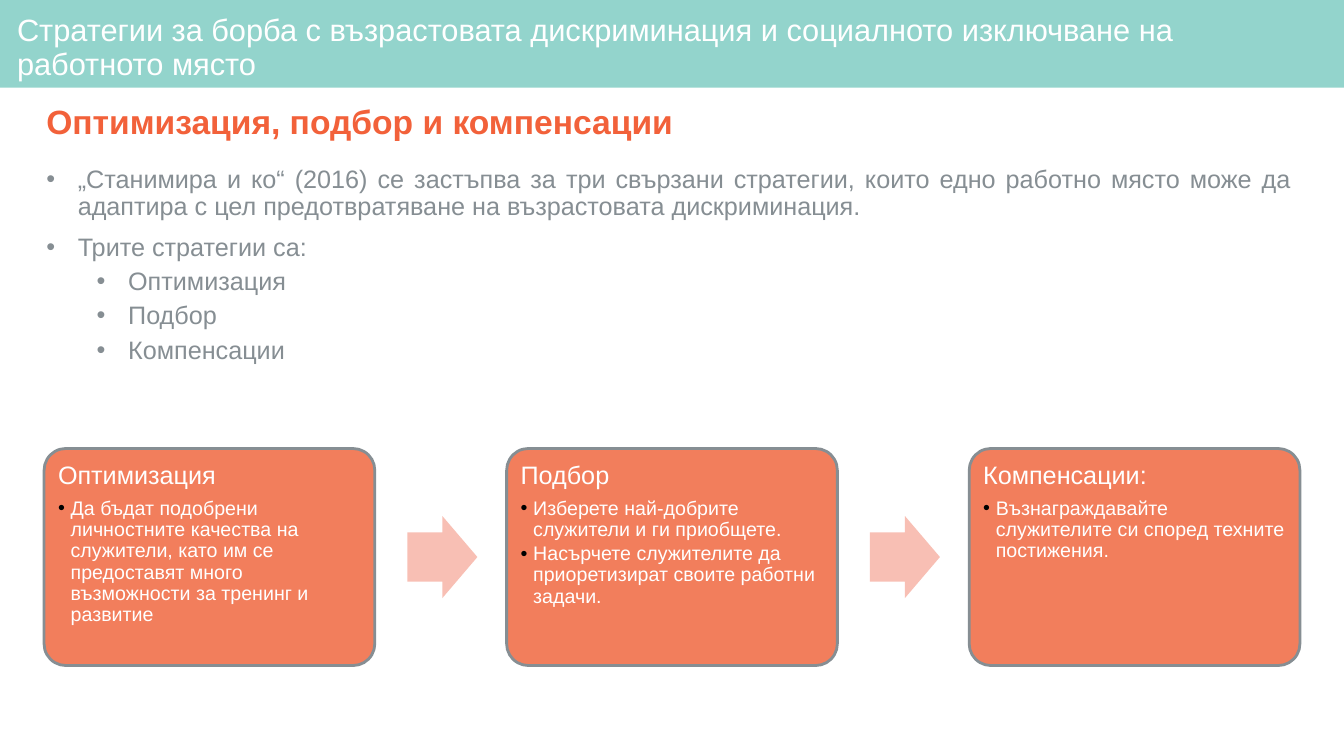
from dataclasses import dataclass

from lxml.etree import SubElement
from pptx import Presentation
from pptx.dml.color import RGBColor
from pptx.enum.shapes import MSO_SHAPE as SHAPE
from pptx.enum.text import MSO_ANCHOR as ANCHOR, PP_ALIGN as ALIGN
from pptx.oxml.ns import qn
from pptx.util import Pt


@dataclass(frozen=True)
class Theme:
    font: str = "Arial"
    teal: str = "93D4CC"
    orange: str = "F2613A"
    card: str = "F27E5C"
    arrow: str = "F8BFB4"
    grey: str = "868E93"
    white: str = "FFFFFF"
    black: str = "000000"
    title_size: float = 22
    heading_size: float = 24
    body_size: float = 18
    card_size: float = 14


theme = Theme()
rgb = RGBColor.from_string


def set_text(sp, paragraphs, inset, anchor=ANCHOR.TOP):
    """Fill a shape with (text, size, color, options) paragraphs."""
    tf = sp.text_frame
    tf.word_wrap = True
    tf.vertical_anchor = anchor
    tf.margin_left, tf.margin_top, tf.margin_right, tf.margin_bottom = (Pt(m) for m in inset)
    for i, (text, size, color, options) in enumerate(paragraphs):
        p = tf.add_paragraph() if i else tf.paragraphs[0]
        p.text = text
        p.alignment = options.get("align", ALIGN.LEFT)
        p.level = options.get("level", 0)
        p.line_spacing = 0.9
        p.space_before = Pt(options.get("before", 0))
        left, first = options.get("indent", (0, 0))
        pPr = p._p.get_or_add_pPr()
        pPr.set("marL", str(Pt(left)))
        pPr.set("indent", str(Pt(first)))
        if "bullet" in options:
            SubElement(SubElement(pPr, qn("a:buClr")), qn("a:srgbClr"), val=options["bullet"])
            SubElement(pPr, qn("a:buFont"), typeface=theme.font)
            SubElement(pPr, qn("a:buChar"), char="•")
        else:
            SubElement(pPr, qn("a:buNone"))
        font = p.runs[0].font
        font.name, font.size, font.color.rgb = theme.font, Pt(size), rgb(color)
        font.bold = options.get("bold", False)


def add_block(kind, left, top, width, height, fill):
    sp = slide.shapes.add_shape(kind, Pt(left), Pt(top), Pt(width), Pt(height))
    sp.shadow.inherit = False
    sp.fill.solid()
    sp.fill.fore_color.rgb = rgb(fill)
    sp.line.fill.background()
    return sp


prs = Presentation()
prs.slide_width, prs.slide_height = Pt(960), Pt(540)
slide = prs.slides.add_slide(prs.slide_layouts[6])

# Title band, heading and strategy list
add_block(SHAPE.RECTANGLE, 0, 0, 960, 62.7, theme.teal)

heading_style = dict(align=ALIGN.JUSTIFY, indent=(36, -18), before=10, bold=True)
item_style = dict(align=ALIGN.JUSTIFY, indent=(40.5, -22.5), before=10, bullet=theme.grey)
subitem_style = dict(level=1, indent=(76.5, -22.5), before=5, bullet=theme.grey)

title = [("Стратегии за борба с възрастовата дискриминация и социалното изключване на работното място",
          theme.title_size, theme.white, {})]
heading = [("Оптимизация, подбор и компенсации", theme.heading_size, theme.orange, heading_style)]
strategies = [(text, theme.body_size, theme.grey, style) for text, style in [
    ("„Станимира и ко“ (2016) се застъпва за три свързани стратегии, които едно работно място "
     "може да адаптира с цел предотвратяване на възрастовата дискриминация.", item_style),
    ("Трите стратегии са:", item_style),
    ("Оптимизация", subitem_style),
    ("Подбор", subitem_style),
    ("Компенсации", subitem_style),
]]

body_inset = (7.2, 3.6, 7.2, 3.6)
for top, width, height, paragraphs, inset, anchor in [
    (6.5, 940, 56.2, title, (4.2,) * 4, ANCHOR.MIDDLE),
    (67, 940, 43.2, heading, body_inset, ANCHOR.MIDDLE),
    (115.2, 921.6, 190, strategies, body_inset, ANCHOR.TOP),
]:
    sp = slide.shapes.add_textbox(Pt(8), Pt(top), Pt(width), Pt(height))
    set_text(sp, paragraphs, inset, anchor)

# Process: three cards joined by arrows
cards = [
    ("Оптимизация", ["Да бъдат подобрени личностните качества на служители, като им се "
                     "предоставят много възможности за тренинг и развитие"]),
    ("Подбор", ["Изберете най-добрите служители и ги приобщете.",
                "Насърчете служителите да приоретизират своите работни задачи."]),
    ("Компенсации:", ["Възнаграждавайте служителите си според техните постижения."]),
]
card_left, card_top, card_width, card_height, card_pitch = 31.5, 320.4, 236.2, 155, 330.4
arrow_width, arrow_height = 50, 58.6
arrow_offset = 259.5
arrow_top = card_top + (card_height - arrow_height) / 2

for i, (name, points) in enumerate(cards):
    left = card_left + i * card_pitch
    card = add_block(SHAPE.ROUNDED_RECTANGLE, left, card_top, card_width, card_height, theme.card)
    card.adjustments[0] = 0.1
    card.line.color.rgb = rgb(theme.grey)
    card.line.width = Pt(2)
    paragraphs = [(name, theme.body_size, theme.white, {})]
    for j, text in enumerate(points):
        point_style = dict(level=1, indent=(9, -9), before=2.1 if j else 6.3, bullet=theme.black)
        paragraphs.append((text, theme.card_size, theme.white, point_style))
    set_text(card, paragraphs, (5.4,) * 4)

    if i < len(cards) - 1:
        arrow = add_block(SHAPE.RIGHT_ARROW, left + arrow_offset, arrow_top,
                          arrow_width, arrow_height, theme.arrow)
        arrow.adjustments[0] = 0.6
        arrow.adjustments[1] = 0.5

prs.save("out.pptx")
